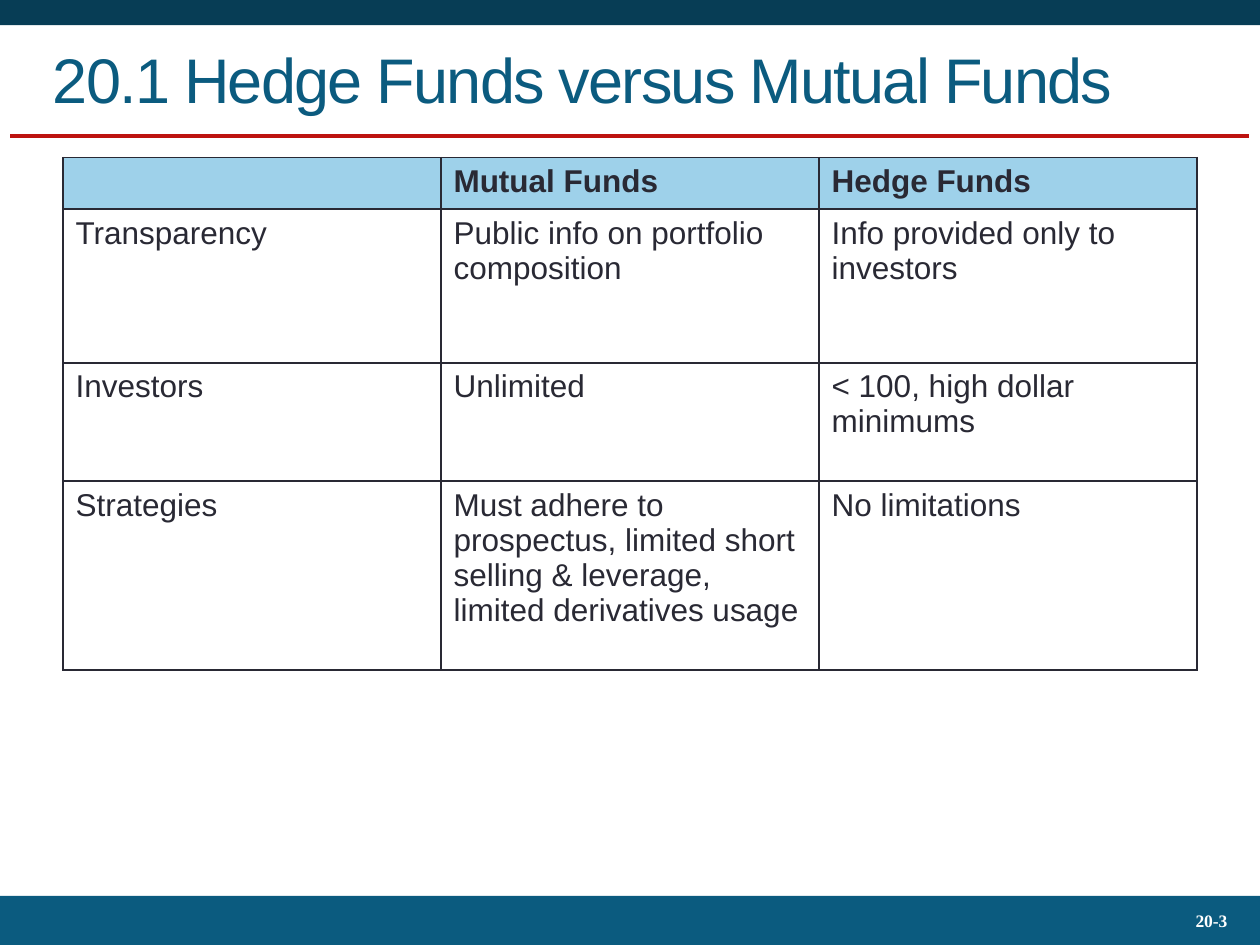
from typing import NamedTuple

from lxml import etree
from pptx import Presentation
from pptx import util as u
from pptx.dml.color import RGBColor
from pptx.enum import shapes, text
from pptx.oxml import ns

NAVY, TEAL, RED = "073D55", "0B5B7F", "BD130F"
SKY, INK, WHITE = "9ED1EA", "292934", "FFFFFF"


class Band(NamedTuple):
    top: float
    height: float
    color: str


class Row(NamedTuple):
    height: float
    cells: tuple[str, str, str]
    fill: str = WHITE
    bold: bool = False


BANDS = [Band(0, 0.2, NAVY), Band(7.11, 0.39, TEAL)]
ROWS = [
    Row(0.41, ("", "Mutual Funds", "Hedge Funds"), SKY, True),
    Row(1.22, ("Transparency", "Public info on portfolio composition",
               "Info provided only to investors")),
    Row(0.94, ("Investors", "Unlimited", "< 100, high dollar minimums")),
    Row(1.5, ("Strategies",
              "Must adhere to prospectus, limited short selling & leverage, "
              "limited derivatives usage", "No limitations")),
]
COLUMN_WIDTH = 3


def rgb(color: str) -> RGBColor:
    return RGBColor.from_string(color)


def write(frame, content: str, *, size: float, color: str, font: str = "Arial",
          bold: bool = False, align=text.PP_ALIGN.LEFT,
          anchor=text.MSO_ANCHOR.MIDDLE, tracking: float = 0) -> None:
    """Fill a text frame with one formatted paragraph; tracking is in points."""
    frame.word_wrap = True
    frame.vertical_anchor = anchor
    paragraph = frame.paragraphs[0]
    paragraph.alignment = align
    run = paragraph.add_run()
    run.text = content
    run.font.name, run.font.size, run.font.bold = font, u.Pt(size), bold
    run.font.color.rgb = rgb(color)
    if tracking:
        run.font._element.set("spc", str(int(tracking * 100)))


def add_band(slide, band: Band) -> None:
    shape = slide.shapes.add_shape(shapes.MSO_SHAPE.RECTANGLE, 0, u.Inches(band.top),
                                   u.Inches(10), u.Inches(band.height))
    shape.shadow.inherit = False
    shape.fill.solid()
    shape.fill.fore_color.rgb = rgb(band.color)
    shape.line.fill.background()


def add_rule(slide, left: float, right: float, top: float) -> None:
    rule = slide.shapes.add_connector(shapes.MSO_CONNECTOR.STRAIGHT, u.Inches(left),
                                      u.Inches(top), u.Inches(right), u.Inches(top))
    rule.line.color.rgb = rgb(RED)
    rule.line.width = u.Pt(2.25)
    etree.SubElement(rule._element.spPr, ns.qn("a:effectLst"))


def add_borders(cell, color: str, width: float) -> None:
    properties = cell._tc.get_or_add_tcPr()
    for position, side in enumerate(("lnL", "lnR", "lnT", "lnB")):
        line = etree.Element(ns.qn(f"a:{side}"), w=str(u.Pt(width)))
        fill = etree.SubElement(line, ns.qn("a:solidFill"))
        etree.SubElement(fill, ns.qn("a:srgbClr"), val=color)
        properties.insert(position, line)


def add_comparison(slide, rows: list[Row], left: float, top: float) -> None:
    columns = len(rows[0].cells)
    table = slide.shapes.add_table(
        len(rows), columns, u.Inches(left), u.Inches(top),
        u.Inches(columns * COLUMN_WIDTH),
        u.Inches(sum(row.height for row in rows))).table
    table.first_row = table.horz_banding = False
    for row_index, row in enumerate(rows):
        table.rows[row_index].height = u.Inches(row.height)
        for column_index, content in enumerate(row.cells):
            cell = table.cell(row_index, column_index)
            cell.fill.solid()
            cell.fill.fore_color.rgb = rgb(row.fill)
            add_borders(cell, INK, 1)
            cell.vertical_anchor = text.MSO_ANCHOR.TOP
            if content:
                write(cell.text_frame, content, size=18, color=INK, bold=row.bold,
                      anchor=text.MSO_ANCHOR.TOP)


def main() -> None:
    presentation = Presentation()
    presentation.slide_width, presentation.slide_height = u.Inches(10), u.Inches(7.5)
    slide = presentation.slides.add_slide(presentation.slide_layouts.get_by_name("Title Only"))

    for band in BANDS:
        add_band(slide, band)
    add_rule(slide, 0.08, 9.91, 1.08)

    number = slide.shapes.add_textbox(u.Inches(8.67), u.Inches(7.13),
                                      u.Inches(1.17), u.Inches(0.36))
    write(number.text_frame, "20-3", size=10, color=WHITE, font="Times New Roman",
          bold=True, align=text.PP_ALIGN.RIGHT)

    title = slide.shapes.title
    title.left, title.top = u.Inches(0.32), u.Inches(0.17)
    title.width, title.height = u.Inches(9.37), u.Inches(0.91)
    write(title.text_frame, "20.1 Hedge Funds versus Mutual Funds", size=36,
          color=TEAL, tracking=-1)

    add_comparison(slide, ROWS, 0.5, 1.25)
    presentation.save("out.pptx")


if __name__ == "__main__":
    main()
